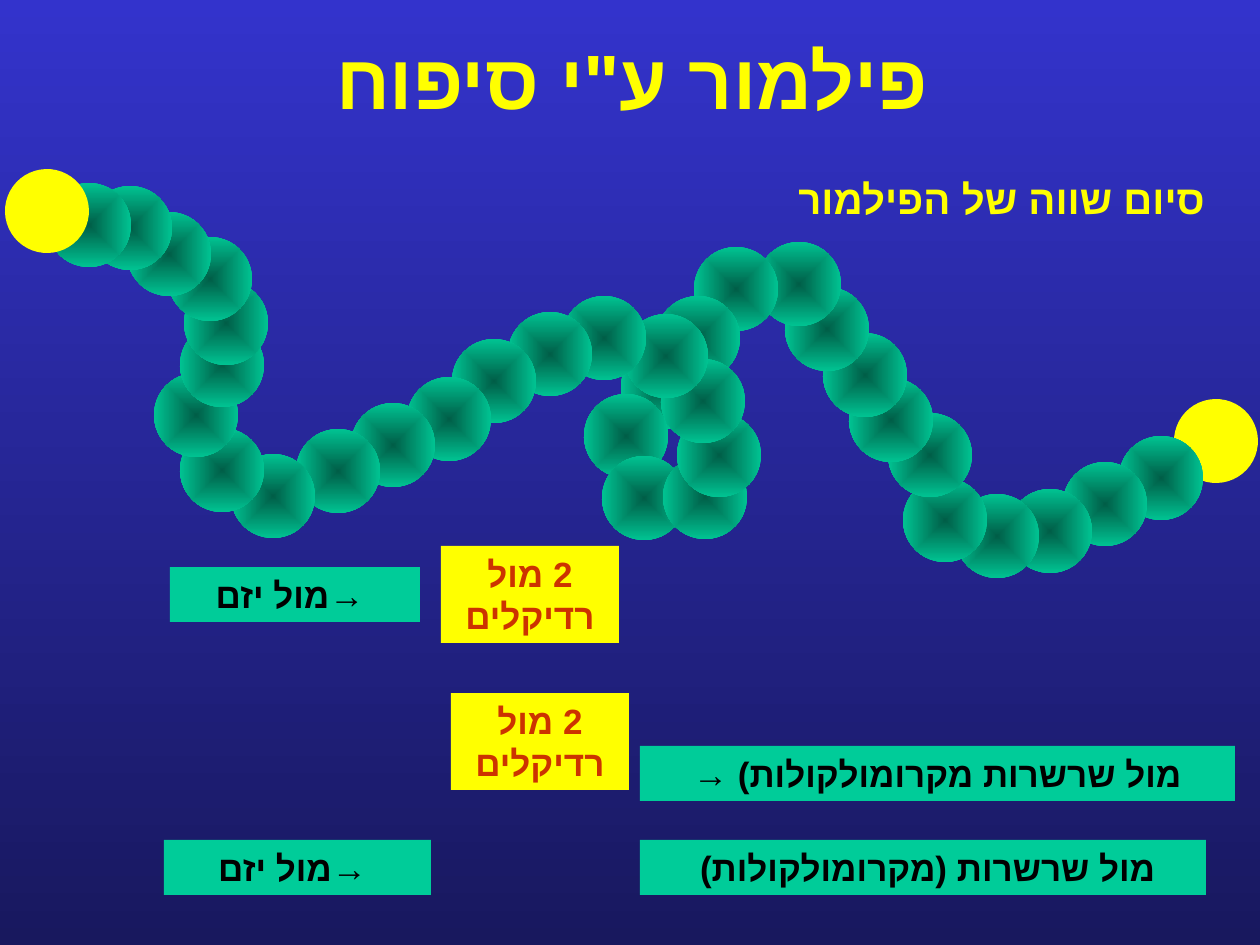
from dataclasses import dataclass

from lxml.etree import SubElement
from pptx import Presentation
from pptx.dml.color import RGBColor
from pptx.enum.shapes import MSO_SHAPE
from pptx.enum.text import MSO_ANCHOR, MSO_AUTO_SIZE, PP_ALIGN
from pptx.oxml.ns import qn
from pptx.util import Pt

EMU_PER_PX = 914400 // 126


@dataclass(frozen=True)
class Theme:
    """Colours, fonts and type sizes of the slide."""

    sky: str = "3333CC"
    night: str = "18185E"
    yellow: str = "FFFF00"
    green: str = "00CC99"
    deep_green: str = "005E47"
    red: str = "CC3300"
    black: str = "000000"
    title_font: str = "Calibri"
    body_font: str = "Times New Roman"
    hebrew_font: str = "Arial"
    title_size: int = 44
    subtitle_size: int = 23
    label_size: int = 20


THEME = Theme()
BEAD_SIZE = 84
BEAD_ROTATION = 185.6
CHAIN_ORIGIN = (5, 169)
CHAIN = [
    (1169, 230), (1114, 267), (1058, 293), (1003, 320), (950, 325), (898, 309),
    (883, 244), (844, 209), (818, 164), (780, 118), (752, 73), (689, 78),
    (651, 127), (616, 176), (579, 225), (597, 287), (658, 286), (672, 244),
    (656, 190), (619, 145), (557, 127), (503, 143), (447, 170), (402, 208),
    (346, 234), (291, 260), (226, 285), (175, 259), (149, 204), (175, 154),
    (179, 112), (163, 68), (122, 43), (83, 17), (42, 14), (0, 0),
]
INITIATOR = " →מול יזם"
RADICALS = "2 מול רדיקלים"
LABELS = [
    ((170, 567, 250, 55), INITIATOR, THEME.green, THEME.black),
    ((441, 546, 178, 97), RADICALS, THEME.yellow, THEME.red),
    ((451, 693, 178, 97), RADICALS, THEME.yellow, THEME.red),
    ((640, 746, 595, 55), "מול שרשרות מקרומולקולות) →", THEME.green, THEME.black),
    ((164, 840, 267, 55), INITIATOR, THEME.green, THEME.black),
    ((640, 840, 566, 55), "מול שרשרות (מקרומולקולות) ", THEME.green, THEME.black),
]


def px(*lengths):
    """Turn pixel lengths into EMU."""
    return [length * EMU_PER_PX for length in lengths]


def rgb(code):
    """Turn a hex code into a colour."""
    return RGBColor.from_string(code)


def set_gradient(fill, *codes):
    """Give a fill a two-stop gradient."""
    fill.gradient()
    for stop, code in zip(fill.gradient_stops, codes):
        stop.color.rgb = rgb(code)


def add_hebrew(slide, box, wording, size, color, font, align=PP_ALIGN.CENTER):
    """Place one bold right-to-left paragraph in a box."""
    label = slide.shapes.add_textbox(*px(*box))
    frame = label.text_frame
    frame.word_wrap = True
    paragraph = frame.paragraphs[0]
    paragraph.text = wording
    paragraph.alignment = align
    paragraph.font.name = font
    paragraph.font.size = Pt(size)
    paragraph.font.bold = True
    paragraph.font.color.rgb = rgb(color)
    properties = paragraph._p.get_or_add_pPr()
    properties.set("rtl", "1")
    complex_script = SubElement(properties.find(qn("a:defRPr")), qn("a:cs"))
    complex_script.set("typeface", THEME.hebrew_font)
    for run in paragraph.runs:
        run.font.name = font
        run.font.size = Pt(size)
        run.font.bold = True
        run.font.color.rgb = rgb(color)
        SubElement(run._r.rPr, qn("a:cs")).set("typeface", THEME.hebrew_font)
    return label


def add_heading(slide, title_box, subtitle_box):
    """Place the title and the subtitle."""
    title = add_hebrew(slide, title_box, 'פילמור ע"י סיפוח', THEME.title_size,
                       THEME.yellow, THEME.title_font)
    title.text_frame.vertical_anchor = MSO_ANCHOR.MIDDLE
    add_hebrew(slide, subtitle_box, "סיום שווה של הפילמור", THEME.subtitle_size,
               THEME.yellow, THEME.body_font, PP_ALIGN.RIGHT)


def add_label(slide, box, wording, fill, color):
    """Place one filled label of the mole balance."""
    label = add_hebrew(slide, box, wording, THEME.label_size, color, THEME.body_font)
    label.text_frame.auto_size = MSO_AUTO_SIZE.SHAPE_TO_FIT_TEXT
    label.fill.solid()
    label.fill.fore_color.rgb = rgb(fill)


def shade_from_center(bead):
    """Shade a bead from a dark centre to a light rim."""
    set_gradient(bead.fill, THEME.deep_green, THEME.green)
    gradient = bead._element.spPr.find(qn("a:gradFill"))
    gradient.remove(gradient.find(qn("a:lin")))
    center = SubElement(gradient, qn("a:path"), {"path": "shape"})
    SubElement(center, qn("a:fillToRect"), dict.fromkeys("ltrb", "50000"))


def add_chain(slide, origin):
    """Place the polymer chain with a yellow radical at each end."""
    chain = slide.shapes.add_group_shape()
    left, top = origin
    for index, (x, y) in enumerate(CHAIN):
        bead = chain.shapes.add_shape(
            MSO_SHAPE.OVAL, *px(left + x, top + y, BEAD_SIZE, BEAD_SIZE))
        bead.shadow.inherit = False
        bead.rotation = BEAD_ROTATION
        bead.line.fill.background()
        if index in (0, len(CHAIN) - 1):
            bead.fill.solid()
            bead.fill.fore_color.rgb = rgb(THEME.yellow)
        else:
            shade_from_center(bead)


def main():
    """Build the slide and save it."""
    deck = Presentation()
    deck.slide_width, deck.slide_height = px(1260, 945)
    slide = deck.slides.add_slide(deck.slide_layouts[6])
    backdrop = slide.background.fill
    set_gradient(backdrop, THEME.sky, THEME.night)
    backdrop.gradient_angle = 270
    add_heading(slide, (97, 0, 1071, 158), (662, 168, 556, 60))
    for label in LABELS:
        add_label(slide, *label)
    add_chain(slide, CHAIN_ORIGIN)
    deck.save("out.pptx")


if __name__ == "__main__":
    main()
